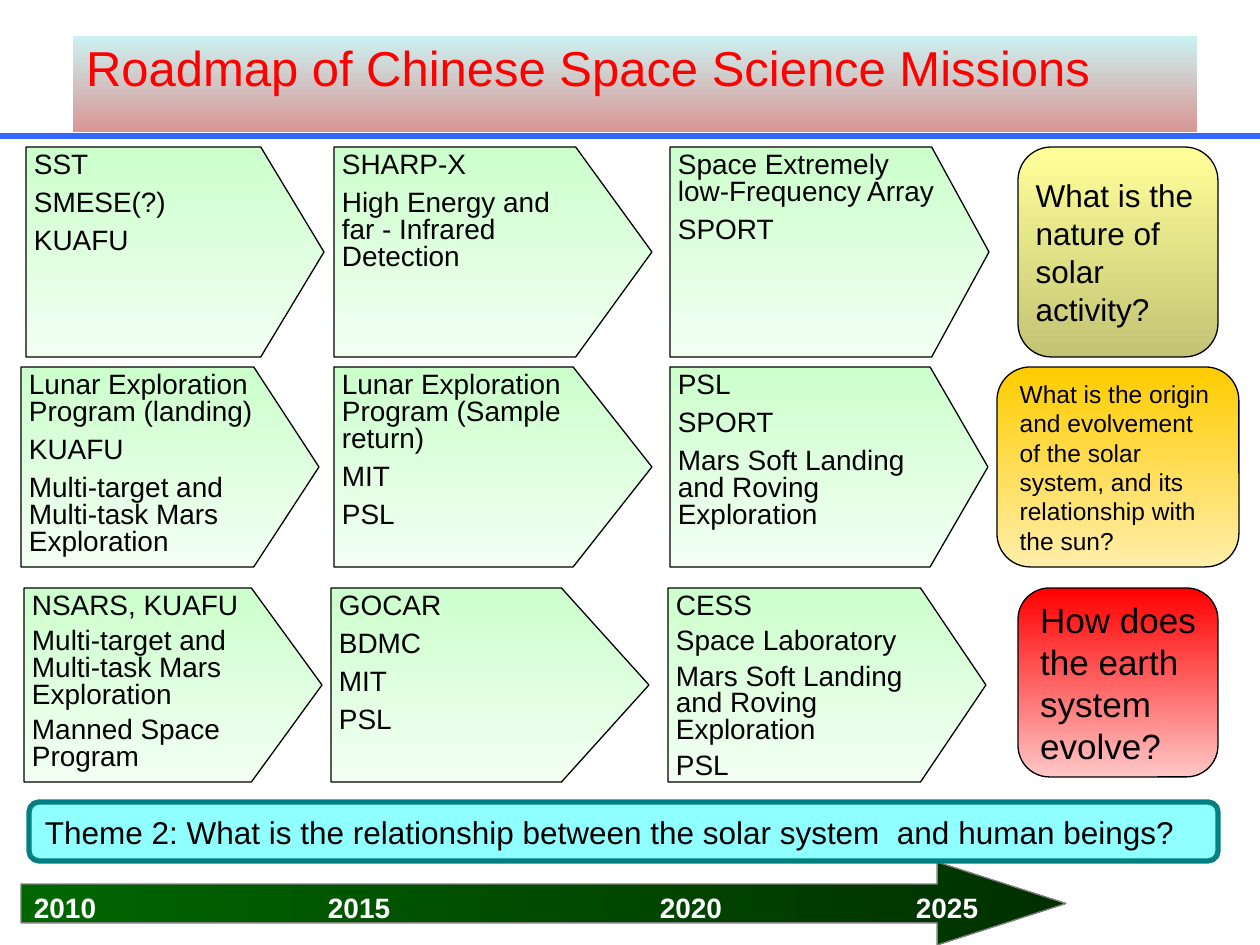
from pptx import Presentation
from pptx.dml.color import RGBColor
from pptx.enum.shapes import MSO_CONNECTOR, MSO_SHAPE
from pptx.enum.text import MSO_ANCHOR, PP_ALIGN
from pptx.oxml.ns import qn
from pptx.util import Emu, Pt
from lxml.etree import SubElement

EMU_PER_PX = 914400 / 126

COLORS = {
    "black": "000000", "white": "FFFFFF", "red": "FF0000", "blue": "3366FF",
    "gray": "808080", "teal": "008080", "aqua": "8FFFFF",
    "title_top": "CBF2F2", "title_bottom": "D99694",
    "mint": "CCFFCC", "mint_pale": "F3FFF3",
    "yellow": "FFFF99", "olive": "C3C375",
    "gold": "FFCC00", "gold_pale": "FFEEAA", "pink": "FFC6C6",
    "green": "006600", "green_dark": "003000",
}

# Each row: top, height, then (left, width, point depth, space before, missions)
MISSION_ROWS = [
    (147, 210, [
        (26, 298, 0.301, 6.4, ["SST", "SMESE(?)", "KUAFU"]),
        (334, 318, 0.363, 6.4,
         ["SHARP-X", "High Energy and\vfar - Infrared Detection"]),
        (670, 319, 0.273, 6.4,
         ["Space Extremely low-Frequency Array", "SPORT"]),
    ]),
    (367, 200, [
        (21, 298, 0.326, 6.4,
         ["Lunar Exploration Program (landing)", "KUAFU",
          "Multi-target and Multi-task Mars Exploration"]),
        (334, 318, 0.394, 6.4,
         ["Lunar Exploration Program (Sample return)", "MIT", "PSL"]),
        (670, 318, 0.289, 6.4,
         ["PSL", "SPORT", "Mars Soft Landing and Roving Exploration"]),
    ]),
    (588, 194, [
        (24, 298, 0.364, 4.8,
         ["NSARS, KUAFU", "Multi-target and Multi-task Mars Exploration",
          "Manned Space Program"]),
        (331, 318, 0.451, 6.4, ["GOCAR", "BDMC", "MIT", "PSL"]),
        (668, 318, 0.337, 4.8,
         ["CESS", "Space Laboratory",
          "Mars Soft Landing and Roving Exploration", "PSL"]),
    ]),
]

# Box, gradient, text size, left and right insets, question
QUESTIONS = [
    ((1018, 147, 200, 210), ("yellow", "olive"), 18, (8, 8),
     "What is the nature of solar activity?"),
    ((997, 367, 242, 200), ("gold", "gold_pale"), 14, (13, 13),
     "What is the origin and evolvement of the solar system, "
     "and its relationship with the sun?"),
    ((1018, 588, 200, 189), ("red", "pink"), 20, (13, 6),
     "How does the earth system evolve?"),
]

YEARS = ["2010", "2015", "2020", "2025"]
YEAR_TABS = [294, 626, 882]


def px(n):
    return Emu(round(n * EMU_PER_PX))


def rgb(name):
    return RGBColor.from_string(COLORS[name])


def paint(sp, fill, angle=270):
    """Fill with one colour name, or with a (start, end) gradient."""
    if isinstance(fill, str):
        sp.fill.solid()
        sp.fill.fore_color.rgb = rgb(fill)
        return
    sp.fill.gradient()
    sp.fill.gradient_angle = angle
    for stop, name, position in zip(sp.fill.gradient_stops, fill, (0, 1)):
        stop.color.rgb = rgb(name)
        stop.position = position


def write(sp, paragraphs, size=16, color="black", bold=False, line_spacing=1.0,
          space_before=0, anchor=MSO_ANCHOR.TOP, insets=(13, 6, 13, 6),
          wrap=True, tabs=()):
    tf = sp.text_frame
    tf.word_wrap = wrap
    tf.vertical_anchor = anchor
    tf.margin_left, tf.margin_top, tf.margin_right, tf.margin_bottom = map(px, insets)
    for i, text in enumerate(paragraphs):
        p = tf.add_paragraph() if i else tf.paragraphs[0]
        p.text = text
        p.alignment = PP_ALIGN.LEFT
        p.line_spacing = line_spacing
        p.space_before = Pt(space_before if i else 0)
        if tabs:
            tab_list = SubElement(p._p.get_or_add_pPr(), qn("a:tabLst"))
            for pos in tabs:
                SubElement(tab_list, qn("a:tab"), pos=str(px(pos)), algn="l")
        for r in p.runs:
            r.font.name = "Arial"
            r.font.size = Pt(size)
            r.font.bold = bold
            r.font.color.rgb = rgb(color)


def add_block(slide, kind, box, fill, line="black", width=0.75, adjust=(), angle=270):
    sp = slide.shapes.add_shape(kind, *map(px, box))
    sp.shadow.inherit = False
    paint(sp, fill, angle)
    sp.line.color.rgb = rgb(line)
    sp.line.width = Pt(width)
    for i, value in enumerate(adjust):
        sp.adjustments[i] = value
    return sp


def add_rule(slide, y, length):
    line = slide.shapes.add_connector(MSO_CONNECTOR.STRAIGHT, 0, px(y), px(length), px(y))
    line.line.color.rgb = rgb("blue")
    line.line.width = Pt(3.5)
    SubElement(line._element.spPr, qn("a:effectLst"))


def format_title(slide):
    title = slide.shapes.title
    title.left, title.top, title.width, title.height = map(px, (73, 36, 1124, 96))
    paint(title, ("title_top", "title_bottom"))
    write(title, ["Roadmap of Chinese Space Science Missions"], size=28, color="red",
          insets=(13, 1, 13, 6))


def add_missions(slide):
    for top, height, plates in MISSION_ROWS:
        for left, width, depth, gap, missions in plates:
            sp = add_block(slide, MSO_SHAPE.PENTAGON, (left, top, width, height),
                           ("mint", "mint_pale"), adjust=[depth])
            write(sp, missions, line_spacing=0.8, space_before=gap,
                  insets=(8, 6, 23, 6))


def add_questions(slide):
    for box, fill, size, (left, right), question in QUESTIONS:
        sp = add_block(slide, MSO_SHAPE.ROUNDED_RECTANGLE, box, fill)
        write(sp, [question], size=size, anchor=MSO_ANCHOR.MIDDLE,
              insets=(left, 6, right, 6))


def add_timeline(slide):
    arrow = add_block(slide, MSO_SHAPE.RIGHT_ARROW, (21, 862, 1045, 83),
                      ("green", "green_dark"), line="gray",
                      adjust=(0.467, 1.552), angle=0)
    write(arrow, ["\t".join(YEARS)], color="white", bold=True, tabs=YEAR_TABS)


def add_theme(slide):
    sp = add_block(slide, MSO_SHAPE.ROUNDED_RECTANGLE, (29, 802, 1189, 59),
                   "aqua", line="teal", width=3)
    write(sp, ["Theme 2: What is the relationship between the solar system  "
               "and human beings?"],
          size=18, anchor=MSO_ANCHOR.MIDDLE, wrap=False)


def main():
    prs = Presentation()
    prs.slide_width, prs.slide_height = px(1260), px(945)
    slide = prs.slides.add_slide(prs.slide_layouts[5])
    add_rule(slide, 136, 1260)
    format_title(slide)
    add_missions(slide)
    add_timeline(slide)
    add_theme(slide)
    add_questions(slide)
    prs.save("out.pptx")


if __name__ == "__main__":
    main()
